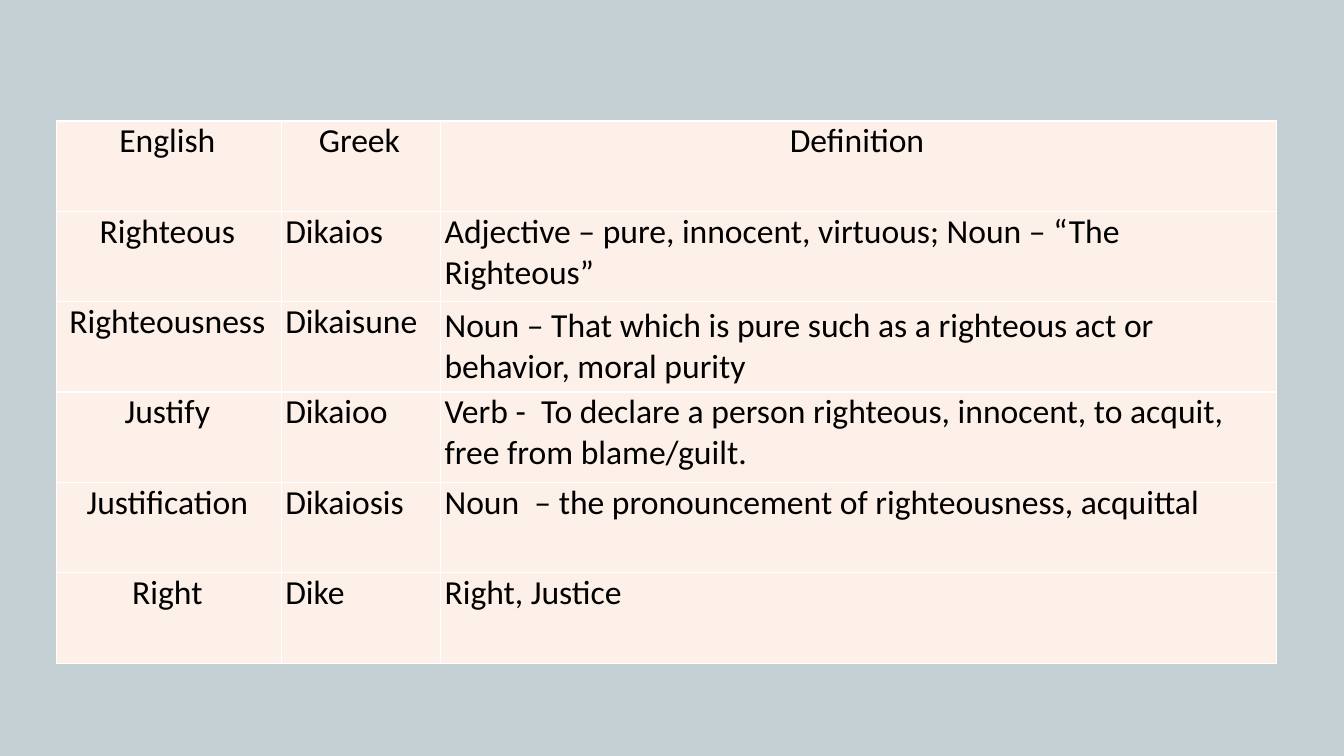
from dataclasses import dataclass

from lxml.etree import SubElement
from pptx import Presentation
from pptx.dml.color import RGBColor
from pptx.enum.text import MSO_ANCHOR, PP_ALIGN
from pptx.oxml.ns import qn
from pptx.util import Inches, Pt


@dataclass(frozen=True)
class Theme:
    """Colours and type of the slide."""

    background: str = "C3CFD3"
    cell: str = "FDF0E8"
    border: str = "FFFFFF"
    ink: str = "000000"
    font: str = "Calibri"
    size: int = 24
    border_width: int = 1


THEME = Theme()
GLOSSARY = [
    ("English", "Greek", "Definition"),
    ("Righteous", "Dikaios", "Adjective – pure, innocent, virtuous; Noun – “The Righteous”"),
    ("Righteousness", "Dikaisune",
     "Noun – That which is pure such as a righteous act or behavior, moral purity"),
    ("Justify", "Dikaioo",
     "Verb -  To declare a person righteous, innocent, to acquit, free from blame/guilt."),
    ("Justification", "Dikaiosis", "Noun  – the pronouncement of righteousness, acquittal"),
    ("Right", "Dike", "Right, Justice"),
]
COLUMN_WIDTHS = (2.23, 1.58, 8.29)
MIDDLE_CELL = (2, 2)
CELL_FORMAT = {
    "margin_left": Inches(0.04),
    "margin_top": Inches(0),
    "margin_right": Inches(0.07),
    "margin_bottom": Inches(0),
}
FONT_FORMAT = {"name": THEME.font, "size": Pt(THEME.size), "bold": False}
TABLE_FORMAT = {"first_row": False, "horz_banding": False}


def apply_format(target, values):
    """Set each named attribute of the target."""
    for name, value in values.items():
        setattr(target, name, value)


def add_borders(cell):
    """Draw a solid line on all four sides of a cell."""
    properties = cell._tc.get_or_add_tcPr()
    for side in ("a:lnL", "a:lnR", "a:lnT", "a:lnB"):
        line = SubElement(properties, qn(side), w=str(Pt(THEME.border_width)))
        SubElement(SubElement(line, qn("a:solidFill")), qn("a:srgbClr"), val=THEME.border)


def fill_cell(cell, wording, centred, anchor):
    """Write and style one table cell."""
    apply_format(cell, CELL_FORMAT)
    cell.vertical_anchor = anchor
    add_borders(cell)
    cell.fill.solid()
    cell.fill.fore_color.rgb = RGBColor.from_string(THEME.cell)
    paragraph = cell.text_frame.paragraphs[0]
    paragraph.alignment = PP_ALIGN.CENTER if centred else PP_ALIGN.LEFT
    run = paragraph.add_run()
    run.text = wording
    apply_format(run.font, FONT_FORMAT)
    run.font.color.rgb = RGBColor.from_string(THEME.ink)


def add_glossary(slide, left, top, width, height):
    """Place the glossary table in the given box."""
    glossary = slide.shapes.add_table(
        len(GLOSSARY), len(COLUMN_WIDTHS), left, top, width, height).table
    apply_format(glossary, TABLE_FORMAT)
    for column, share in zip(glossary.columns, COLUMN_WIDTHS):
        column.width = int(width * share / sum(COLUMN_WIDTHS))
    for row, entry in enumerate(GLOSSARY):
        for column, wording in enumerate(entry):
            anchor = MSO_ANCHOR.MIDDLE if (row, column) == MIDDLE_CELL else MSO_ANCHOR.TOP
            fill_cell(glossary.cell(row, column), wording, row == 0 or column == 0, anchor)


def main():
    """Build and save the presentation."""
    presentation = Presentation()
    presentation.slide_width = Inches(13.33)
    presentation.slide_height = Inches(7.5)
    slide = presentation.slides.add_slide(presentation.slide_layouts[6])
    slide.background.fill.solid()
    slide.background.fill.fore_color.rgb = RGBColor.from_string(THEME.background)
    add_glossary(slide, Inches(0.56), Inches(1.2), Inches(12.1), Inches(5.38))
    presentation.save("out.pptx")


if __name__ == "__main__":
    main()
